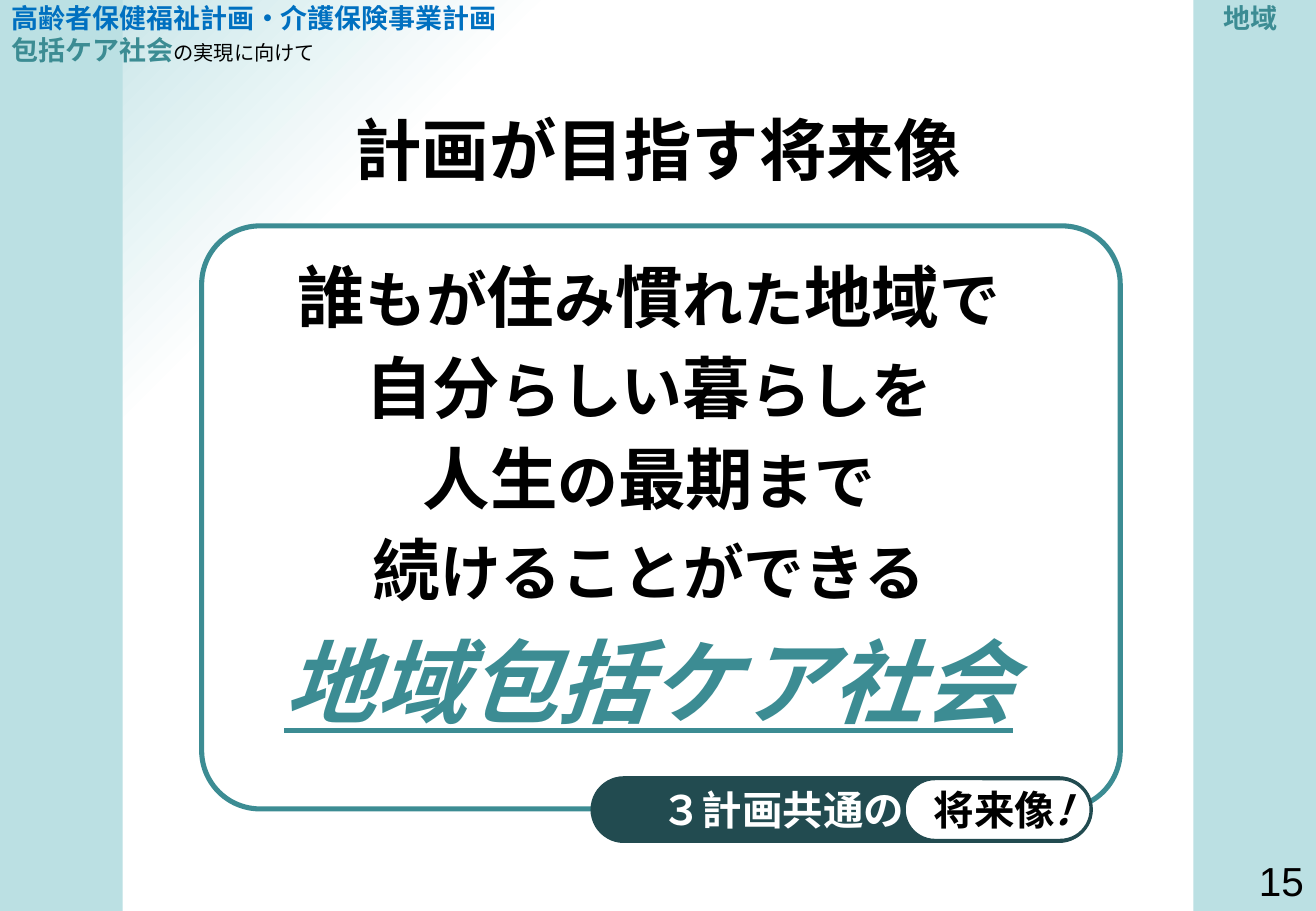
from lxml import etree
from pptx import Presentation
from pptx.dml.color import RGBColor
from pptx.enum import shapes, text
from pptx.oxml import ns
from pptx.util import Inches, Pt

# Content: each run is (text, size, format values)
CJK = "Noto Sans CJK JP"
TEAL, PALE, DARK = "3C8C93", "BBE0E3", "224B50"
WHITE, BLACK, BLUE = "FFFFFF", "000000", "0070C0"
WIDTH, HEIGHT, BAND = 10.83, 7.5, 1.01
BIG, SMALL = 40, 36

VISION_LINES = [
    ["誰", "もが", "住", "み", "慣", "れた", "地域", "で"],
    ["自分", "らしい", "暮", "らしを"],
    ["人生", "の", "最期", "まで"],
    ["続", "けることができる"],
]
GOAL = ("地域包括ケア社会", 54, {"color": TEAL, "italic": True, "underline": True})
HEADER_LINES = [
    [("高齢者保健福祉計画・介護保険事業計画", 16, {"color": BLUE}),
     ("\t地域", 16, {"color": TEAL})],
    [("包括ケア社会", 16, {"color": TEAL}), ("の実現に向けて", 12, {"bold": False})],
]
TITLE = [("計画が目指す将来像", 40, {})]
COMMON = [("３計画共通の", 24, {"color": WHITE})]
FUTURE = [("将来像", 24, {}), ("!", 24, {"italic": True})]
PAGE = [("15", 24, {"bold": False, "name": "Arial"})]

presentation = Presentation()
presentation.slide_width, presentation.slide_height = Inches(WIDTH), Inches(HEIGHT)
slide = presentation.slides.add_slide(presentation.slide_layouts[6])


def rgb(value):
    return RGBColor.from_string(value)


def add_box(box, kind="RECTANGLE", fill=None, line=None, line_width=1, corner=None):
    shape = slide.shapes.add_shape(
        getattr(shapes.MSO_SHAPE, kind), *[Inches(length) for length in box])
    shape.shadow.inherit = False
    if fill:
        shape.fill.solid()
        shape.fill.fore_color.rgb = rgb(fill)
    else:
        shape.fill.background()
    if line:
        shape.line.color.rgb = rgb(line)
        shape.line.width = Pt(line_width)
    else:
        shape.line.fill.background()
    if corner is not None:
        shape.adjustments[0] = corner
    return shape


def write(shape, lines, align="CENTER", anchor="MIDDLE", wrap=True, **margins):
    """Fill a shape with lines, each a pair of runs and paragraph values."""
    frame = shape.text_frame
    frame.word_wrap = wrap
    frame.vertical_anchor = getattr(text.MSO_ANCHOR, anchor)
    for side, length in margins.items():
        setattr(frame, f"margin_{side}", Inches(length))
    for index, (runs, spacing) in enumerate(lines):
        paragraph = frame.paragraphs[0] if index == 0 else frame.add_paragraph()
        paragraph.alignment = getattr(text.PP_ALIGN, align)
        for key, points in spacing.items():
            setattr(paragraph, key, Pt(points))
        for content, size, changes in runs:
            run = paragraph.add_run()
            run.text = content
            values = {"name": CJK, "bold": True, "color": BLACK, **changes}
            run.font.color.rgb = rgb(values.pop("color"))
            run.font.size = Pt(size)
            for key, value in values.items():
                setattr(run.font, key, value)
            east_asian = etree.SubElement(run.font._element, ns.qn("a:ea"))
            east_asian.set("typeface", values["name"])
    return frame


# Background: radial fade from the bottom right corner
fill = slide.background.fill
fill.gradient()
gradient = fill._fill._gradFill
for child in list(gradient):
    gradient.remove(child)
stops = etree.SubElement(gradient, ns.qn("a:gsLst"))
for position, color in [(0, WHITE), (75, WHITE), (100, PALE)]:
    stop = etree.SubElement(stops, ns.qn("a:gs"), pos=str(position * 1000))
    etree.SubElement(stop, ns.qn("a:srgbClr"), val=color)
radial = etree.SubElement(gradient, ns.qn("a:path"))
radial.set("path", "circle")
etree.SubElement(radial, ns.qn("a:fillToRect"), l="100000", t="100000")

# Frame, side bands and page number
add_box((1.66, 1.86, 7.56, 4.8), "ROUNDED_RECTANGLE", WHITE, TEAL, 3, 0.1)
add_box((WIDTH - BAND, 0, BAND, HEIGHT), fill=PALE)
write(add_box((0, 7, WIDTH, 0.5)), [(PAGE, {})], "RIGHT", "TOP", top=0.05)
add_box((0, 0, BAND, HEIGHT), fill=PALE)

# Vision statement: large and small runs alternate
vision = [
    ([(part, (BIG, SMALL)[index % 2], {}) for index, part in enumerate(parts)],
     {"space_before": 6, "line_spacing": 48})
    for parts in VISION_LINES
]
vision.append(([GOAL], {"space_before": 10.5, "line_spacing": 64}))
write(add_box((1.8, 2.06, 7.08, 4.09), fill=WHITE), vision, anchor="TOP", top=0.04)

# Title
write(add_box((BAND, 0.85, WIDTH - 2 * BAND, 0.75)), [(TITLE, {})])

# Label made of two pills; the dark text ends where the white pill begins
add_pill = {"kind": "ROUNDED_RECTANGLE", "corner": 0.5}
common_pill = add_box((4.86, 6.39, 4.13, 0.55), fill=DARK, **add_pill)
write(common_pill, [(COMMON, {})], "LEFT", left=0.5, top=0, bottom=0)
future_pill = add_box((7.44, 6.41, 1.54, 0.51), fill=WHITE, line=DARK, line_width=2, **add_pill)
write(future_pill, [(FUTURE, {})], "RIGHT", wrap=False, left=0, right=0.1, top=0, bottom=0)

# Header, with a tab stop in the right band
header = write(add_box((0, 0, WIDTH, 0.55)),
               [(runs, {"line_spacing": 19}) for runs in HEADER_LINES],
               "LEFT", top=0, bottom=0)
properties = header.paragraphs[0]._p.get_or_add_pPr()
tabs = etree.SubElement(properties, ns.qn("a:tabLst"))
etree.SubElement(tabs, ns.qn("a:tab"), pos=str(Inches(9.97)), algn="l")

presentation.save("out.pptx")
